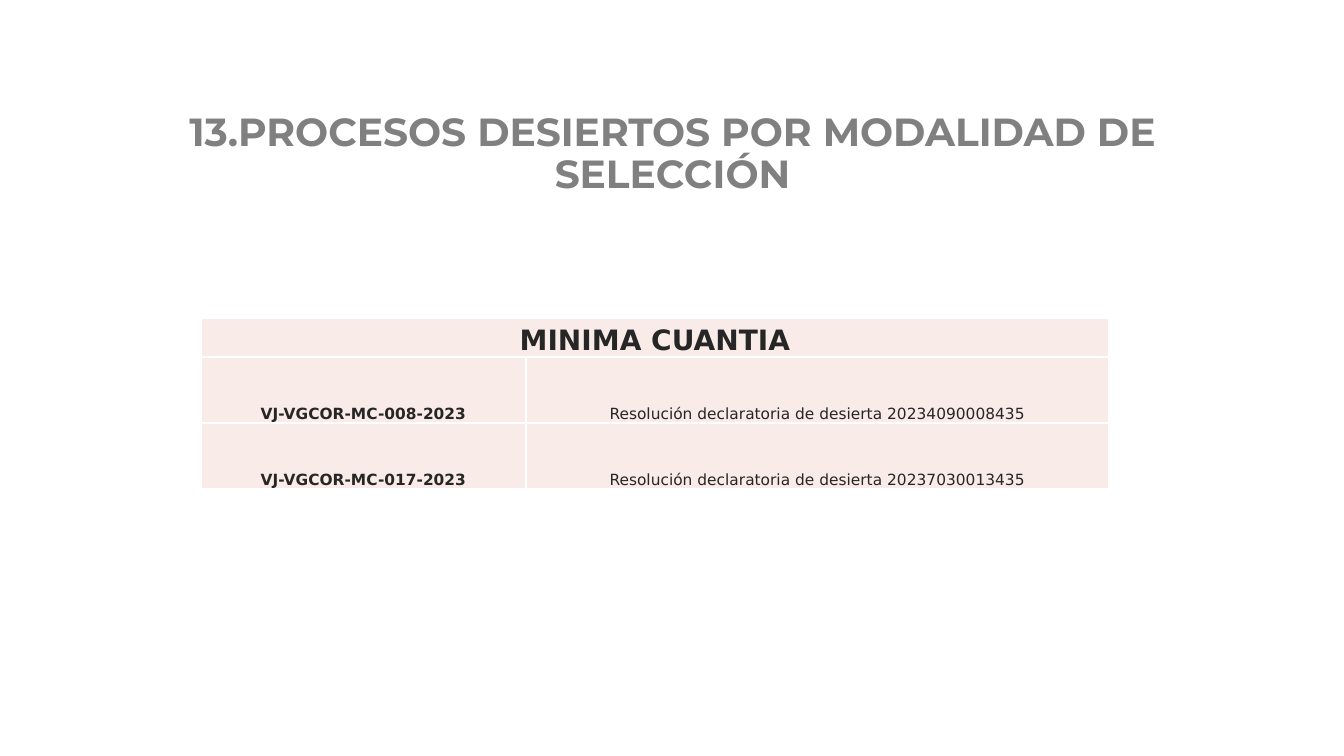
from dataclasses import dataclass

from lxml import etree
from pptx import Presentation
from pptx import util as u
from pptx.dml.color import RGBColor
from pptx.enum import text
from pptx.oxml.ns import qn


@dataclass(frozen=True)
class Theme:
    title_font: str = "Montserrat"
    table_font: str = "DejaVu Sans"
    title_color: str = "808080"
    text_color: str = "262626"
    cell_fill: str = "F9EBE8"
    border: str = "FFFFFF"
    title_size: int = 28
    heading_size: int = 20
    body_size: int = 11


THEME = Theme()
EMU_PER_PX = 914400 / 100.8


def px(length):
    return u.Emu(round(length * EMU_PER_PX))


def format_paragraph(paragraph, font_name, size, color, bold):
    paragraph.alignment = text.PP_ALIGN.CENTER
    for run in paragraph.runs:
        run.font.name = font_name
        run.font.size = u.Pt(size)
        run.font.bold = bold
        run.font.color.rgb = RGBColor.from_string(color)


presentation = Presentation()
presentation.slide_width, presentation.slide_height = px(1344), px(756)
slide = presentation.slides.add_slide(presentation.slide_layouts.get_by_name("Title Only"))

# Title
title = slide.shapes.title
title.left, title.top, title.width, title.height = px(93), px(100), px(1159), px(102)
title_frame = title.text_frame
title_frame.text = "13.PROCESOS DESIERTOS POR MODALIDAD DE SELECCIÓN"
title_frame.word_wrap = True
title_frame.auto_size = text.MSO_AUTO_SIZE.NONE
title_frame.vertical_anchor = text.MSO_ANCHOR.BOTTOM
title_frame.paragraphs[0].line_spacing = 0.9
format_paragraph(title_frame.paragraphs[0], THEME.title_font, THEME.title_size,
                 THEME.title_color, True)

# Table of processes declared void
rows = [
    ("MINIMA CUANTIA", ""),
    ("VJ-VGCOR-MC-008-2023", "Resolución declaratoria de desierta 20234090008435"),
    ("VJ-VGCOR-MC-017-2023", "Resolución declaratoria de desierta 20237030013435"),
]
column_widths = [325, 583]
row_heights = [39, 66, 66]
table = slide.shapes.add_table(len(rows), len(column_widths), px(201), px(318),
                               px(sum(column_widths)), px(sum(row_heights))).table
for column, width in zip(table.columns, column_widths):
    column.width = px(width)
for row, height in zip(table.rows, row_heights):
    row.height = px(height)
table.cell(0, 0).merge(table.cell(0, 1))

for row_index, values in enumerate(rows):
    for column_index, value in enumerate(values):
        cell = table.cell(row_index, column_index)
        cell.margin_left = cell.margin_right = cell.margin_top = px(1)
        cell.margin_bottom = 0
        cell.vertical_anchor = text.MSO_ANCHOR.BOTTOM
        cell.fill.solid()
        cell.fill.fore_color.rgb = RGBColor.from_string(THEME.cell_fill)
        properties = cell._tc.get_or_add_tcPr()
        for position, side in enumerate(("a:lnL", "a:lnR", "a:lnT", "a:lnB")):
            line = etree.Element(qn(side), w=str(u.Pt(1)))
            solid = etree.SubElement(line, qn("a:solidFill"))
            etree.SubElement(solid, qn("a:srgbClr"), val=THEME.border)
            properties.insert(position, line)
        if cell.is_spanned:
            continue
        cell.text_frame.text = value
        size = THEME.heading_size if row_index == 0 else THEME.body_size
        format_paragraph(cell.text_frame.paragraphs[0], THEME.table_font, size,
                         THEME.text_color, column_index == 0)

presentation.save("out.pptx")
